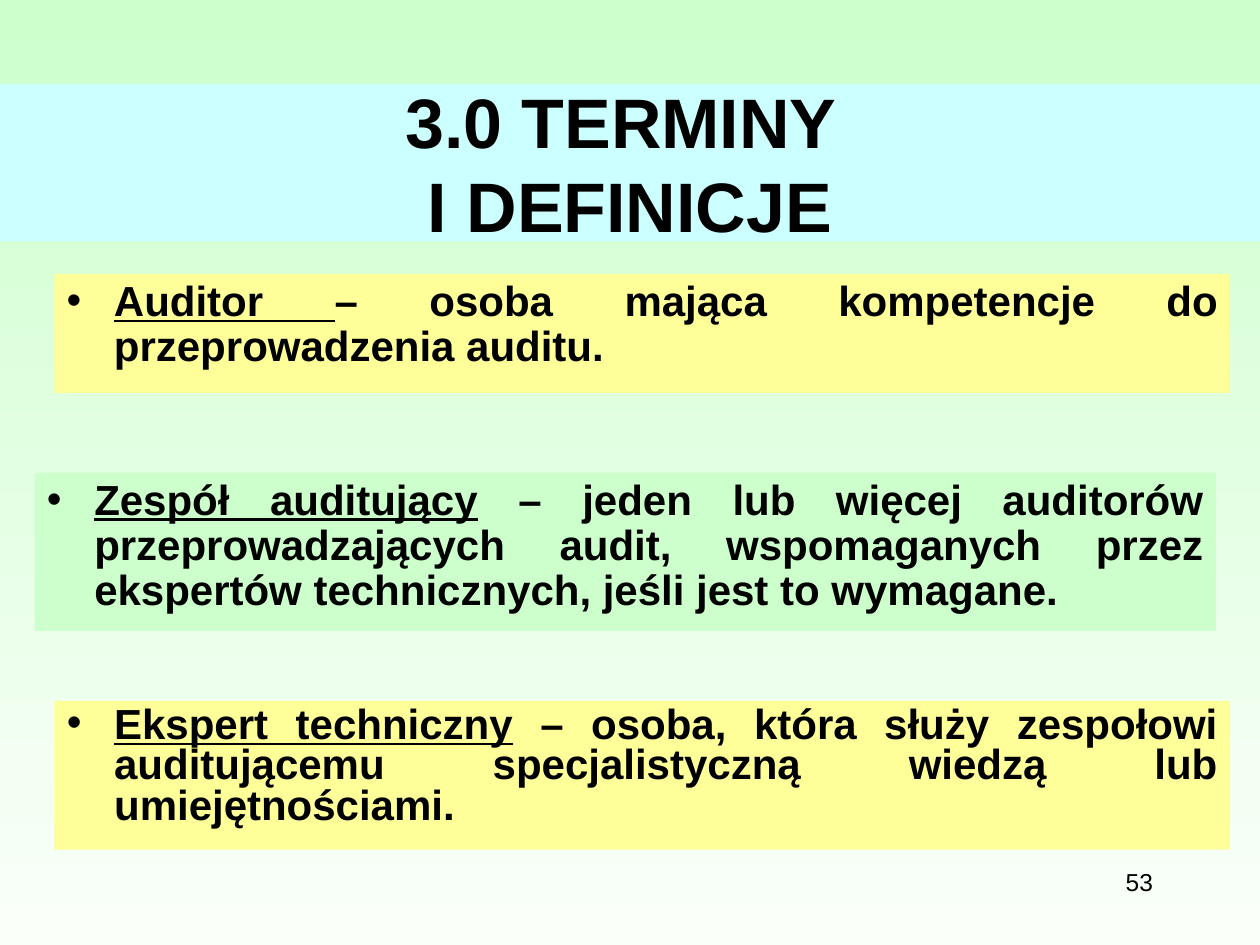
import pptx
import pptx.dml.color
import pptx.enum.text
import pptx.oxml
import pptx.oxml.ns
import pptx.util

Pt = pptx.util.Pt
RGBColor = pptx.dml.color.RGBColor
Align = pptx.enum.text.PP_ALIGN
Anchor = pptx.enum.text.MSO_ANCHOR

BLACK = RGBColor(0x00, 0x00, 0x00)
MINT = RGBColor(0xCC, 0xFF, 0xCC)
PALE_MINT = RGBColor(0xFA, 0xFF, 0xFA)
CYAN = RGBColor(0xCC, 0xFF, 0xFF)
YELLOW = RGBColor(0xFF, 0xFF, 0x99)

FONT = "Arial"
INDENT = 27

TITLE_LINES = ["3.0 TERMINY ", "I DEFINICJE"]
TITLE_AREA = (0, 48, 720, 90)
PAGE_NUMBER = "53"
NUMBER_AREA = (516, 492, 150, 36)

DEFINITIONS = [
    {"term": "Auditor ",
     "meaning": "– osoba mająca kompetencje do przeprowadzenia auditu.",
     "area": (31, 156.5, 672, 68), "color": YELLOW, "spacing": 0.9},
    {"term": "Zespół auditujący",
     "meaning": " – jeden lub więcej auditorów przeprowadzających audit, "
                "wspomaganych przez ekspertów technicznych, jeśli jest to wymagane.",
     "area": (19.75, 270, 675, 90.5), "color": MINT, "spacing": 0.9},
    {"term": "Ekspert techniczny",
     "meaning": " – osoba, która służy zespołowi auditującemu "
                "specjalistyczną wiedzą lub umiejętnościami.",
     "area": (31, 400.5, 672, 85), "color": YELLOW, "spacing": 0.8},
]


def add_span(para, text, size=24, bold=True, underline=False):
    span = para.add_run()
    span.text = text
    span.font.name = FONT
    span.font.size = Pt(size)
    span.font.bold = bold
    span.font.underline = underline
    span.font.color.rgb = BLACK


def prepare(box, area, color=None, anchor=Anchor.TOP):
    box.left, box.top, box.width, box.height = [Pt(length) for length in area]
    if color is not None:
        box.fill.solid()
        box.fill.fore_color.rgb = color
    frame = box.text_frame
    frame.word_wrap = True
    frame.auto_size = pptx.enum.text.MSO_AUTO_SIZE.NONE
    frame.vertical_anchor = anchor
    return frame.paragraphs[0]


def add_bullet(para):
    properties = para._p.get_or_add_pPr()
    properties.set("marL", str(Pt(INDENT)))
    properties.set("indent", str(Pt(-INDENT)))
    for tag, name, value in (("a:buFont", "typeface", FONT), ("a:buChar", "char", "•")):
        mark = pptx.oxml.parse_xml(f"<{tag} {pptx.oxml.ns.nsdecls('a')}/>")
        mark.set(name, value)
        properties.append(mark)


def main():
    deck = pptx.Presentation()
    deck.slide_width, deck.slide_height = Pt(720), Pt(540)
    page = deck.slides.add_slide(deck.slide_layouts[1])

    backdrop = page.background.fill
    backdrop.gradient()
    backdrop.gradient_angle = 270
    for stop, color in zip(backdrop.gradient_stops, (MINT, PALE_MINT)):
        stop.color.rgb = color

    para = prepare(page.shapes.title, TITLE_AREA, color=CYAN, anchor=Anchor.MIDDLE)
    para.alignment = Align.CENTER
    for index, line in enumerate(TITLE_LINES):
        if index:
            para.add_line_break()
        add_span(para, line, size=40)

    for definition in DEFINITIONS:
        if definition is DEFINITIONS[-1]:
            box = page.placeholders[1]
        else:
            box = page.shapes.add_textbox(0, 0, 0, 0)
        para = prepare(box, definition["area"], color=definition["color"])
        para.alignment = Align.JUSTIFY
        para.line_spacing = definition["spacing"]
        para.space_before = Pt(4.8)
        add_bullet(para)
        add_span(para, definition["term"], underline=True)
        add_span(para, definition["meaning"])

    para = prepare(page.shapes.add_textbox(0, 0, 0, 0), NUMBER_AREA)
    para.alignment = Align.RIGHT
    add_span(para, PAGE_NUMBER, size=14, bold=False)

    deck.save("out.pptx")


if __name__ == "__main__":
    main()
